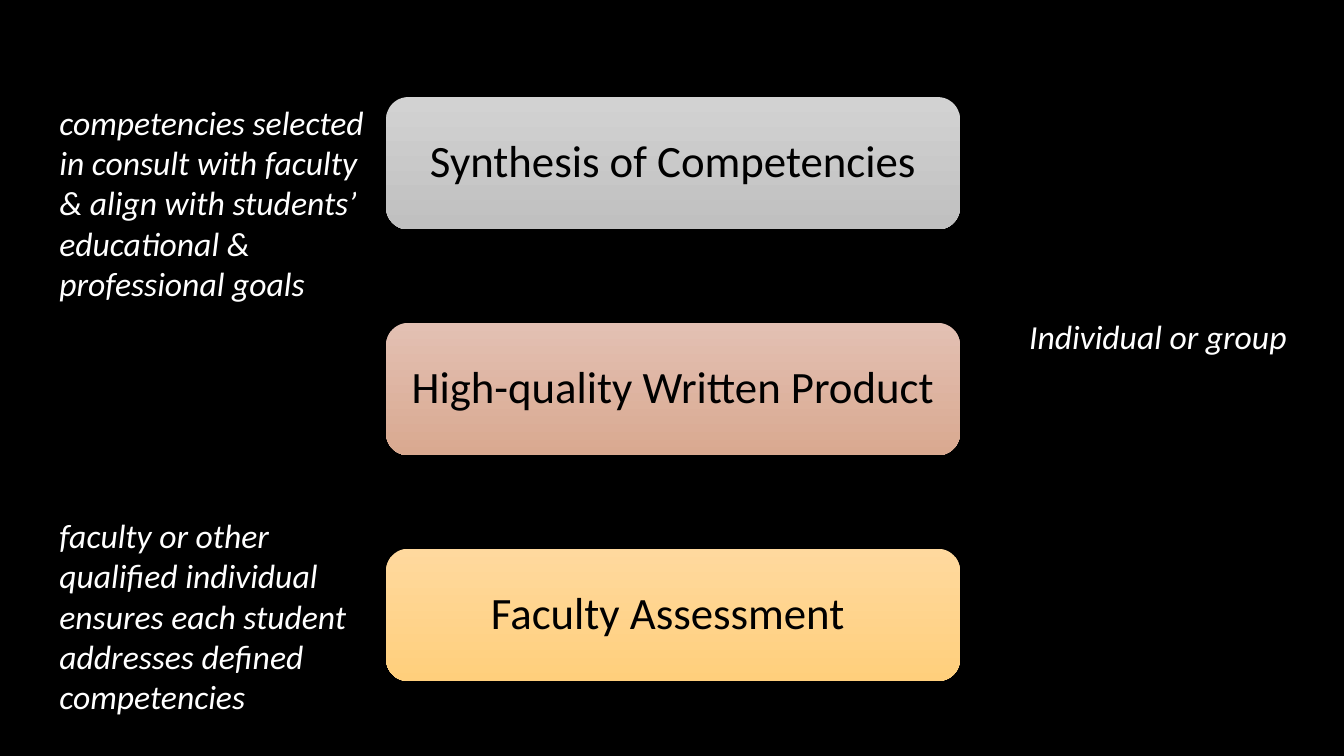
from dataclasses import dataclass

from pptx import Presentation
from pptx import util as u
from pptx.dml.color import RGBColor
from pptx.enum import shapes, text


@dataclass(frozen=True)
class Theme:
    font: str = "Calibri"
    background: str = "000000"
    step_ink: str = "000000"
    note_ink: str = "FFFFFF"
    silver: tuple = ("D2D2D2", "C0C0C0")
    clay: tuple = ("E3C0B3", "D9A990")
    amber: tuple = ("FFD99E", "FFCF7C")
    step_size: int = 32
    note_size: int = 24


class Deck:
    """Holds the theme and current slide; places are percentages of the slide."""

    def __init__(self, theme):
        self.theme = theme
        self.prs = Presentation()
        self.prs.slide_width, self.prs.slide_height = u.Inches(13.33), u.Inches(7.5)
        self.slide = self.prs.slides.add_slide(self.prs.slide_layouts[6])
        backdrop = self.slide.background.fill
        backdrop.solid()
        backdrop.fore_color.rgb = RGBColor.from_string(theme.background)

    def place(self, left, top, width, height):
        across, down = self.prs.slide_width / 100, self.prs.slide_height / 100
        return [round(v) for v in (left * across, top * down, width * across, height * down)]

    def label(self, frame, words, size, ink, align, frame_format, italic=False):
        for name, value in {"word_wrap": True, **frame_format}.items():
            setattr(frame, name, value)
        line = frame.paragraphs[0]
        line.alignment = align
        run = line.add_run()
        run.text = words
        font_format = {"name": self.theme.font, "size": u.Pt(size), "italic": italic}
        for name, value in font_format.items():
            setattr(run.font, name, value)
        run.font.color.rgb = RGBColor.from_string(ink)
        return line

    def step(self, words, shades, area):
        panel = self.slide.shapes.add_shape(
            shapes.MSO_SHAPE.ROUNDED_RECTANGLE, *self.place(*area))
        panel.shadow.inherit = False
        panel.line.fill.background()
        panel.fill.gradient()
        panel.fill.gradient_angle = 270
        for position, (stop, shade) in enumerate(zip(panel.fill.gradient_stops, shades)):
            stop.position = position
            stop.color.rgb = RGBColor.from_string(shade)
        sides = ("margin_left", "margin_right", "margin_top", "margin_bottom")
        frame_format = {side: u.Inches(0.13) for side in sides}
        frame_format["vertical_anchor"] = text.MSO_ANCHOR.MIDDLE
        line = self.label(panel.text_frame, words, self.theme.step_size,
                          self.theme.step_ink, text.PP_ALIGN.CENTER, frame_format)
        line.line_spacing = 0.9

    def note(self, words, area, align=text.PP_ALIGN.LEFT):
        box = self.slide.shapes.add_textbox(*self.place(*area))
        self.label(box.text_frame, words, self.theme.note_size, self.theme.note_ink, align,
                   {"auto_size": text.MSO_AUTO_SIZE.SHAPE_TO_FIT_TEXT}, italic=True)


def main():
    theme = Theme()
    deck = Deck(theme)

    # Three steps, evenly spaced down the middle
    steps = [
        ("Synthesis of Competencies", theme.silver),
        ("High-quality Written Product", theme.clay),
        ("Faculty Assessment ", theme.amber),
    ]
    first_top, pitch = 12.85, 29.87
    for row, (words, shades) in enumerate(steps):
        deck.step(words, shades, (28.73, first_top + row * pitch, 42.7, 17.5))

    # Side notes
    deck.note("competencies selected in consult with faculty & align with students’ "
              "educational & professional goals", (3.68, 12.8, 25.36, 28.27))
    deck.note("Individual or group", (70.74, 41.07, 25.73, 6.67), text.PP_ALIGN.RIGHT)
    deck.note("faculty or other qualified individual ensures each student addresses "
              "defined competencies", (3.68, 67.47, 24.6, 28.27))

    deck.prs.save("out.pptx")


if __name__ == "__main__":
    main()
